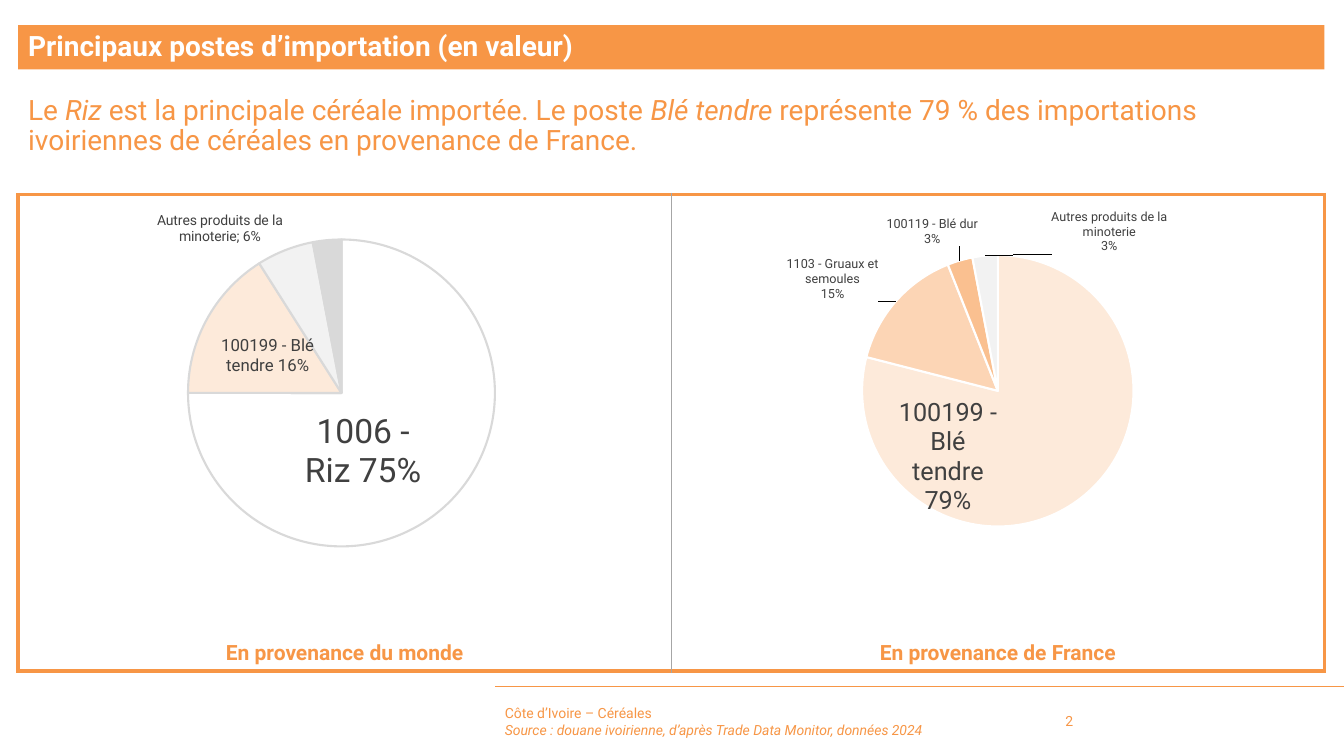
from lxml import etree
from pptx import Presentation
from pptx.chart.data import CategoryChartData
from pptx.dml.color import RGBColor
from pptx.enum.chart import XL_CHART_TYPE
from pptx.enum.shapes import MSO_CONNECTOR, MSO_SHAPE
from pptx.enum.text import MSO_ANCHOR, PP_ALIGN
from pptx.oxml import parse_xml
from pptx.oxml.ns import nsdecls, qn
from pptx.util import Pt

PIE = XL_CHART_TYPE.PIE
MID, TOP = MSO_ANCHOR.MIDDLE, MSO_ANCHOR.TOP
LEFT, MIDDLE = PP_ALIGN.LEFT, PP_ALIGN.CENTER
FONT = "Roboto"
HUE = {"main": "F79646", "white": "FFFFFF", "rule": "A6A6A6", "text": "404040",
       "pale": "FDEADA", "peach": "FCD5B5", "deep": "FAC090",
       "light": "F2F2F2", "grey": "D9D9D9", "olive": "948A54",
       "teal": "4BACC6", "navy": "2C4D75"}

TITLE = [("Principaux postes d’importation (en valeur)", False)]
LEAD = [("Le ", False), ("Riz ", True),
        ("est la principale céréale importée. Le poste ", False),
        ("Blé tendre ", True),
        ("représente 79 % des importations ivoiriennes de céréales "
         "en provenance de France.", False)]
FOOT = [[("Côte d’Ivoire – Céréales", False)],
        [("Source : douane ivoirienne, d’après Trade Data Monitor, données 2024", True)]]

# Slice: name, value, fill, label (size, place, shift x, shift y) or None
PIES = [
    {"name": "En provenance du monde", "line": "grey", "sep": (" ", " ", "; "),
     "plot": (0.26, 0.11, 0.47, 0.73),
     "rows": [
         ("1006 - Riz", 0.75, "white", (24, "ctr", -0.05, 0.01)),
         ("100199 - Blé tendre", 0.16, "pale", (12, "ctr", -0.01, 0)),
         ("Autres produits de la minoterie", 0.06, "light", (10, "outEnd", 0, 0)),
         ("Autres céréales", 0.03, "grey", None)]},
    {"name": "En provenance de France", "line": "white", "sep": ("\n",) * 6,
     "plot": (0.29, 0.15, 0.42, 0.64),
     "rows": [
         ("100199 - Blé tendre", 0.79, "pale", (18, "ctr", -0.14, 0.03)),
         ("1103 - Gruaux et semoules", 0.15, "peach", (9, "outEnd", -0.02, 0.01)),
         ("100119 - Blé dur", 0.03, "deep", (9, "outEnd", 0.03, -0.02)),
         ("1006 - Riz", 0, "olive", None),
         ("1005 - Maïs", 0, "teal", None),
         ("Autres produits de la minoterie", 0.03, "light", (9, "outEnd", 0.28, 0.01)),
         ("Autres céréales", 0, "navy", None)]},
]

EDGE, HALF = 13, 466.5
WIDE = 2 * HALF
BOX_TOP, BOX_TALL = 139, 340.5
PIE_TOP, PIE_TALL = 136.8, 303


def rgb(key):
    return RGBColor.from_string(HUE[key])


def fill_text(shape, lines, size, hue="main", bold=False, align=LEFT, anchor=MID, gap=None):
    frame = shape.text_frame
    frame.word_wrap = True
    frame.vertical_anchor = anchor
    for i, runs in enumerate(lines):
        para = frame.add_paragraph() if i else frame.paragraphs[0]
        para.alignment = align
        if gap:
            para.line_spacing = gap
        for text, slant in runs:
            run = para.add_run()
            run.text = text
            run.font.italic = slant
        font = para.font
        font.name, font.size, font.bold = FONT, Pt(size), bold
        font.color.rgb = rgb(hue)


def add_text(slide, box, lines, size, **style):
    fill_text(slide.shapes.add_textbox(*map(Pt, box)), lines, size, **style)


def add_frame(slide):
    table = slide.shapes.add_table(
        1, 2, *map(Pt, (EDGE, BOX_TOP, WIDE, BOX_TALL))).table
    table.first_row = table.horz_banding = False
    inner, outer = ("rule", 0.75), ("main", 3)
    for i, cell in enumerate(table.iter_cells()):
        cell.fill.background()
        sides = {"L": inner if i else outer, "R": outer if i else inner,
                 "T": outer, "B": outer}
        for spot, (side, (hue, width)) in enumerate(sides.items()):
            cell._tc.get_or_add_tcPr().insert(spot, parse_xml(
                f'<a:ln{side} {nsdecls("a")} w="{Pt(width)}"><a:solidFill>'
                f'<a:srgbClr val="{HUE[hue]}"/></a:solidFill></a:ln{side}>'))


def layout_xml(values, inner=False):
    keys = ("x", "y", "w", "h")
    parts = '<c:layoutTarget val="inner"/>' if inner else ""
    if inner:
        parts += '<c:xMode val="edge"/><c:yMode val="edge"/>'
    parts += "".join(f'<c:{k} val="{v}"/>' for k, v in zip(keys, values))
    return f'<c:layout {nsdecls("c")}><c:manualLayout>{parts}</c:manualLayout></c:layout>'


def labels_xml(pie):
    """Give every slice its own label size, place and separator."""
    shows = ('<c:showLegendKey val="0"/><c:showVal val="1"/><c:showCatName val="1"/>'
             '<c:showSerName val="0"/><c:showPercent val="0"/><c:showBubbleSize val="0"/>')
    form = '<c:numFmt formatCode="0%" sourceLinked="0"/>'
    parts = ""
    for i, (_, _, _, label) in enumerate(pie["rows"]):
        body = '<c:delete val="1"/>'
        if label:
            size, place, *shift = label
            body = layout_xml(shift) if any(shift) else ""
            body += (f'{form}<c:spPr><a:noFill/></c:spPr><c:txPr><a:bodyPr wrap="square"/><a:p><a:pPr>'
                     f'<a:defRPr sz="{size * 100}"><a:solidFill><a:srgbClr val="{HUE["text"]}"/>'
                     f'</a:solidFill><a:latin typeface="{FONT}"/></a:defRPr></a:pPr></a:p></c:txPr>'
                     f'<c:dLblPos val="{place}"/>{shows}'
                     f'<c:separator>{pie["sep"][i]}</c:separator>')
        parts += f'<c:dLbl><c:idx val="{i}"/>{body}</c:dLbl>'
    return (f'<c:dLbls {nsdecls("c", "a")}>{parts}{form}{shows}'
            '<c:showLeaderLines val="1"/></c:dLbls>')


def add_pie(slide, pie, left):
    data = CategoryChartData(number_format="0%")
    data.categories = [row[0] for row in pie["rows"]]
    data.add_series("Series 1", [row[1] for row in pie["rows"]])
    chart = slide.shapes.add_chart(
        PIE, *map(Pt, (left, PIE_TOP, HALF, PIE_TALL)), data).chart
    chart.has_legend = chart.has_title = False
    chart.font.name, chart.font.size = FONT, Pt(8)
    chart.font.color.rgb = rgb("text")
    plot = chart.plots[0]
    plot.vary_by_categories = True
    series = plot.series[0]
    for i, row in enumerate(pie["rows"]):
        look = series.points[i].format
        look.fill.solid()
        look.fill.fore_color.rgb = rgb(row[2])
        look.line.color.rgb = rgb(pie["line"])
        look.line.width = Pt(1.5)
    series._element.find(qn("c:cat")).addprevious(parse_xml(labels_xml(pie)))
    area = chart._chartSpace.chart.plotArea
    for old in area.findall(qn("c:layout")):
        area.remove(old)
    area.insert(0, parse_xml(layout_xml(pie["plot"], inner=True)))


def main():
    deck = Presentation()
    deck.slide_width, deck.slide_height = Pt(960), Pt(540)
    slide = deck.slides.add_slide(deck.slide_layouts[6])

    rule = slide.shapes.add_connector(
        MSO_CONNECTOR.STRAIGHT, *map(Pt, (960, 490.5, 353.5, 490.5)))
    rule.line.color.rgb = rgb("main")
    rule.line.width = Pt(0.5)
    etree.SubElement(rule._element.spPr, qn("a:effectLst"))

    add_frame(slide)
    for i, pie in enumerate(PIES):
        add_text(slide, (EDGE + i * HALF, 453.5, HALF, 25.5), [[(pie["name"], False)]],
                 15, bold=True, align=MIDDLE, anchor=TOP)
    add_text(slide, (353.5, 500.5, 391, 29), FOOT, 10)
    add_text(slide, (754, 500.5, 71, 29), [[("2", False)]], 10)

    bar = slide.shapes.add_shape(MSO_SHAPE.RECTANGLE, *map(Pt, (EDGE, 18, WIDE, 31.5)))
    bar.shadow.inherit = False
    bar.fill.solid()
    bar.fill.fore_color.rgb = rgb("main")
    bar.line.fill.background()
    fill_text(bar, [TITLE], 20, hue="white", bold=True, gap=0.9)
    add_text(slide, (EDGE, 65, WIDE, 58), [LEAD], 20, anchor=TOP, gap=0.9)

    for i, pie in enumerate(PIES):
        add_pie(slide, pie, EDGE + i * HALF)
    deck.save("out.pptx")


if __name__ == "__main__":
    main()
